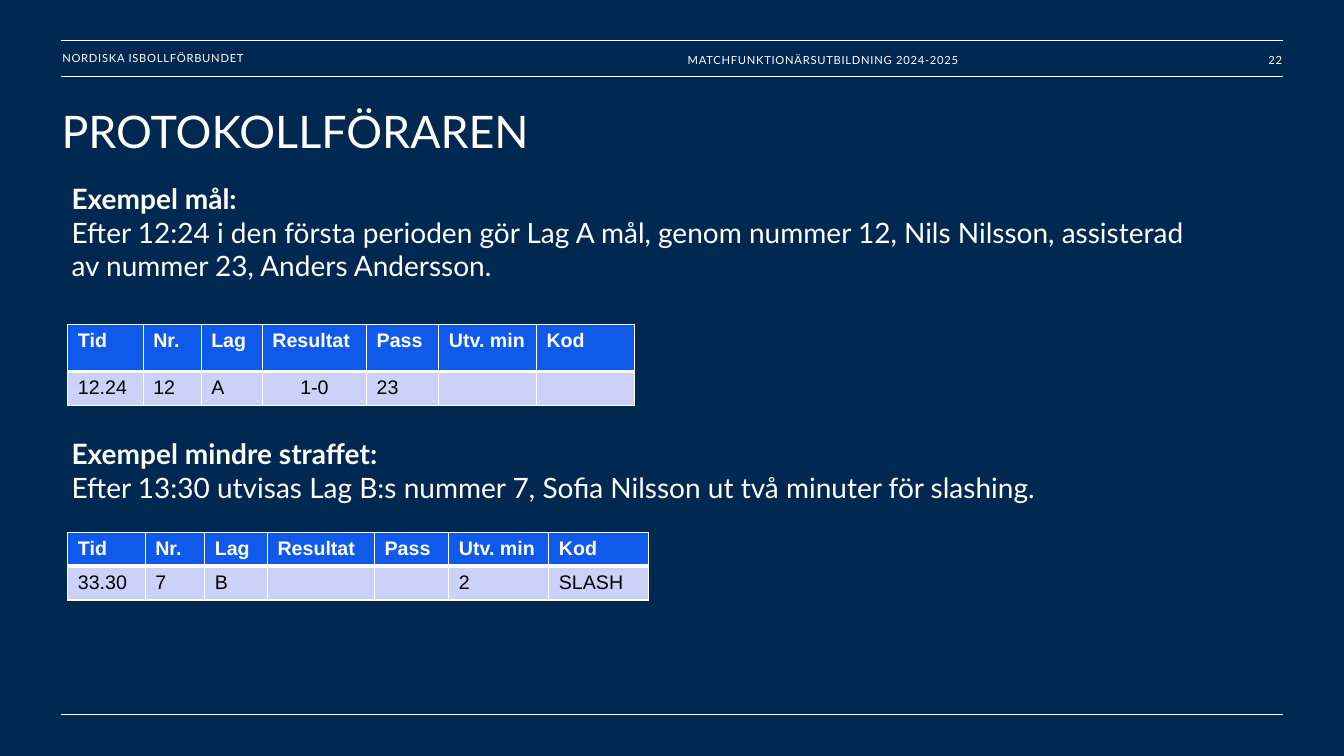
from lxml.etree import SubElement as Sub
from pptx import Presentation
from pptx.dml.color import RGBColor
from pptx.enum.shapes import MSO_CONNECTOR
from pptx.enum.text import MSO_ANCHOR as Anchor, PP_ALIGN as Align
from pptx.oxml.ns import qn
from pptx.util import Cm, Pt

NAVY = RGBColor(0x00, 0x28, 0x50)
BLUE = RGBColor(0x0F, 0x59, 0xEB)
LILAC = RGBColor(0xCC, 0xD1, 0xF7)
WHITE = RGBColor(0xFF, 0xFF, 0xFF)
BLACK = RGBColor(0x00, 0x00, 0x00)


def add_run(p, text, color=WHITE, **font):
    r = p.add_run()
    r.text = text
    r.font.color.rgb = color
    for name, value in font.items():
        setattr(r.font, name, value)
    return r


def set_borders(cell, widths):
    """Draw white borders; widths maps L, R, T and B, in that order, to points."""
    tcPr = cell._tc.get_or_add_tcPr()
    for side, width in widths.items():
        ln = Sub(tcPr, qn(f"a:ln{side}"), w=str(Pt(width)))
        Sub(Sub(ln, qn("a:solidFill")), qn("a:srgbClr"), val=str(WHITE))


prs = Presentation()
prs.slide_width, prs.slide_height = Cm(33.87), Cm(19.05)
s = prs.slides.add_slide(prs.slide_layouts[1])
s.background.fill.solid()
s.background.fill.fore_color.rgb = NAVY

# Rules across the page
for y in (1.02, 1.93, 18.01):
    line = s.shapes.add_connector(MSO_CONNECTOR.STRAIGHT, Cm(1.54), Cm(y), Cm(32.33), Cm(y))
    line.line.color.rgb = WHITE
    line.line.width = Pt(1)
    Sub(line._element.spPr, qn("a:effectLst"))

# Page header
HEADER = [
    ("NORDISKA ISBOLLFÖRBUNDET", 1.57, 8.53, 0, Align.LEFT),
    ("MATCHFUNKTIONÄRSUTBILDNING 2024-2025", 17.33, 9.7, 0.1, Align.LEFT),
    ("22", 30.05, 2.26, 0.1, Align.RIGHT),
]
for text, left, width, inset_top, align in HEADER:
    tf = s.shapes.add_textbox(Cm(left), Cm(1.02), Cm(width), Cm(0.87)).text_frame
    tf.word_wrap = True
    tf.vertical_anchor = Anchor.MIDDLE
    tf.margin_left = tf.margin_right = tf.margin_bottom = 0
    tf.margin_top = Cm(inset_top)
    p = tf.paragraphs[0]
    p.alignment = align
    r = add_run(p, text, name="Lato", size=Pt(8))
    r.font._element.set("spc", "50")

# Title
title = s.shapes.title
title.left, title.top, title.width, title.height = Cm(1.55), Cm(2.62), Cm(30.78), Cm(1.5)
tf = title.text_frame
tf.vertical_anchor = Anchor.TOP
tf.margin_left = tf.margin_top = tf.margin_right = tf.margin_bottom = 0
p = tf.paragraphs[0]
p.alignment = Align.LEFT
add_run(p, "PROTOKOLLFÖRAREN", name="Lato", size=Pt(32))

# Examples: text, bold, space before in points
EXAMPLES = [
    ("Exempel mål:", True, 0),
    ("Efter 12:24 i den första perioden gör Lag A mål, genom nummer 12, Nils Nilsson, "
     "assisterad av nummer 23, Anders Andersson.", False, 0),
    ("Exempel mindre straffet:", True, 110),
    ("Efter 13:30 utvisas Lag B:s nummer 7, Sofia Nilsson ut två minuter för slashing.", False, 0),
]
body = s.placeholders[1]
body.left, body.top, body.width, body.height = Cm(1.55), Cm(4.45), Cm(29.2), Cm(13.5)
tf = body.text_frame
tf.vertical_anchor = Anchor.TOP
for i, (text, bold, gap) in enumerate(EXAMPLES):
    p = tf.add_paragraph() if i else tf.paragraphs[0]
    p.space_before = Pt(gap)
    pPr = p._p.get_or_add_pPr()
    pPr.set("marL", "0")
    pPr.set("indent", "0")
    Sub(pPr, qn("a:buNone"))
    add_run(p, text, name="Lato", size=Pt(20), bold=bold)

# Protocol tables: top, column widths, row heights, entries
HEADINGS = ["Tid", "Nr.", "Lag", "Resultat", "Pass", "Utv. min", "Kod"]
TABLES = [
    (8.17, [1.9, 1.46, 1.54, 2.63, 1.82, 2.46, 2.46], [1.19, 0.85],
     ["12.24", "12", "A", "1-0", "23", "", ""]),
    (13.42, [1.95, 1.5, 1.58, 2.7, 1.87, 2.52, 2.52], [0.85, 0.85],
     ["33.30", "7", "B", "", "", "2", "SLASH"]),
]
ROW_STYLES = [
    (BLUE, WHITE, True, {"L": 1, "R": 1, "T": 1, "B": 3}),
    (LILAC, BLACK, False, {"L": 1, "R": 1, "T": 3, "B": 1}),
]
for top, widths, heights, entries in TABLES:
    table = s.shapes.add_table(2, len(HEADINGS), Cm(1.71), Cm(top),
                               Cm(sum(widths)), Cm(sum(heights))).table
    for column, width in zip(table.columns, widths):
        column.width = Cm(width)
    for i, (texts, (fill, color, bold, borders)) in enumerate(zip([HEADINGS, entries], ROW_STYLES)):
        table.rows[i].height = Cm(heights[i])
        for j, text in enumerate(texts):
            cell = table.cell(i, j)
            set_borders(cell, borders)
            cell.fill.solid()
            cell.fill.fore_color.rgb = fill
            p = cell.text_frame.paragraphs[0]
            p.font.size = Pt(14)
            if text == "1-0":
                p.alignment = Align.CENTER
            if text:
                add_run(p, text, color, name="Arial", size=Pt(14), bold=bold)

prs.save("out.pptx")
